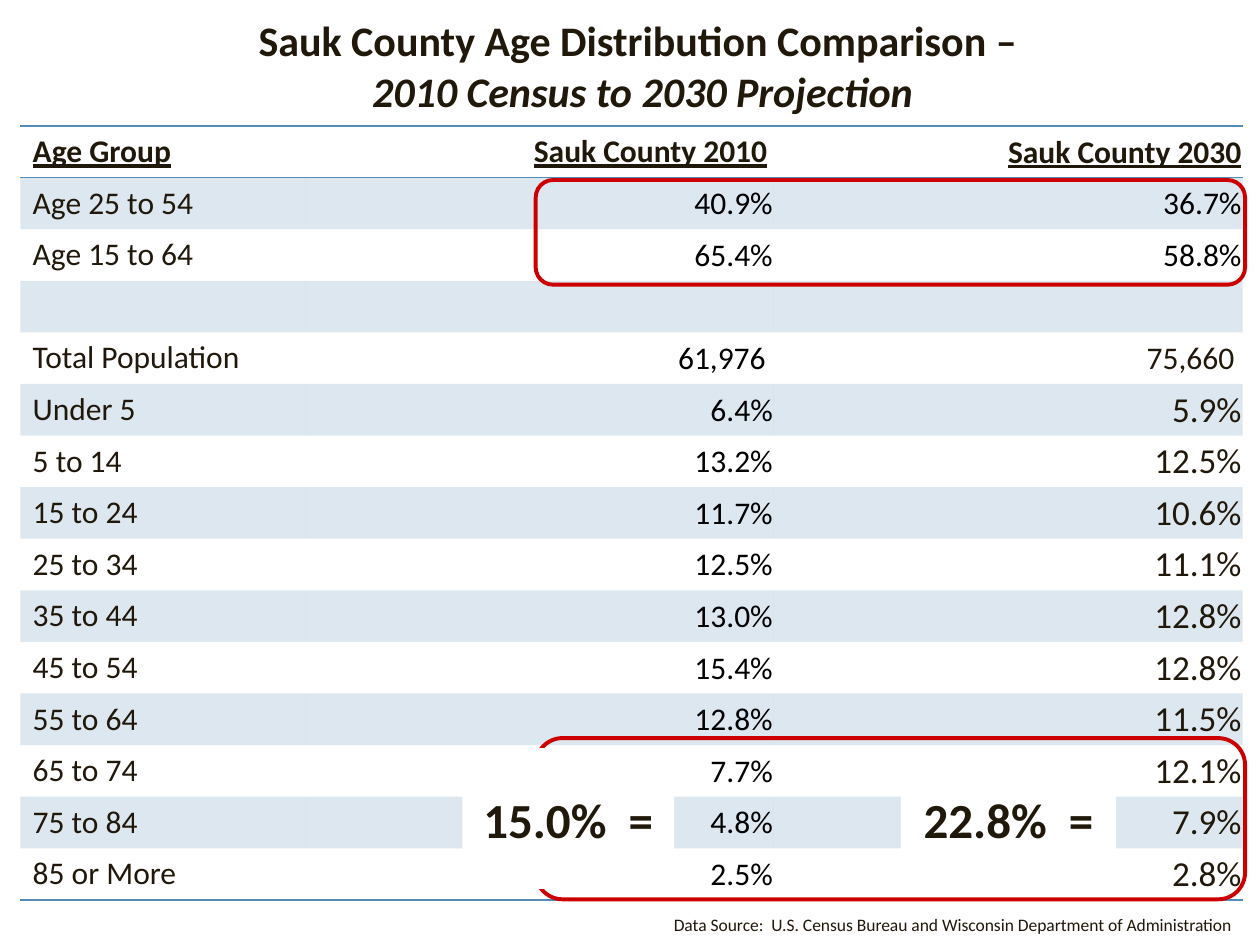
from lxml import etree
from pptx import Presentation
from pptx.dml.color import RGBColor
from pptx.enum import shapes, text
from pptx.oxml import ns
from pptx.util import Cm, Pt

INK = RGBColor(0x20, 0x18, 0x0A)
BLACK = RGBColor(0, 0, 0)
WHITE = RGBColor(255, 255, 255)
RED = RGBColor(0xCC, 0, 0)
BLUE = RGBColor(0x54, 0x8B, 0xB7)
FACE = "Calibri"
PLAIN = "{2D5ABB26-0587-4C30-8999-92F81FD0307C}"  # no style, no grid
LEFT, MID, RIGHT = text.PP_ALIGN.LEFT, text.PP_ALIGN.CENTER, text.PP_ALIGN.RIGHT

HEADS = ("Age Group", "Sauk County 2010", "Sauk County 2030")
ROWS = [
    ("Age 25 to 54", "40.9%", "36.7%"),
    ("Age 15 to 64", "65.4%", "58.8%"),
    ("", "", ""),
    ("Total Population", "61,976 ", " 75,660 "),
    ("Under 5", "6.4%", "5.9%"),
    ("5 to 14", "13.2%", "12.5%"),
    ("15 to 24", "11.7%", "10.6%"),
    ("25 to 34", "12.5%", "11.1%"),
    ("35 to 44", "13.0%", "12.8%"),
    ("45 to 54", "15.4%", "12.8%"),
    ("55 to 64", "12.8%", "11.5%"),
    ("65 to 74", "7.7%", "12.1%"),
    ("75 to 84", "4.8%", "7.9%"),
    ("85 or More", "2.5%", "2.8%"),
]
TOTAL = 4  # table row of the total population


def style(para, size, color=INK, bold=False, align=LEFT):
    para.alignment = align
    font = para.font
    font.name, font.size, font.bold = FACE, Pt(size), bold
    font.color.rgb = color


def add_title(slide):
    title = slide.shapes.title
    title.left, title.top = Cm(2.06), Cm(0.53)
    title.width, title.height = Cm(21.79), Cm(1.57)
    frame = title.text_frame
    frame.auto_size = text.MSO_AUTO_SIZE.NONE
    frame.vertical_anchor = text.MSO_ANCHOR.MIDDLE
    para = frame.paragraphs[0]
    para.add_run().text = "Sauk County Age Distribution Comparison – "
    para.add_line_break()
    run = para.add_run()
    run.text = "2010 Census to 2030 Projection"
    run.font.italic = True
    style(para, 24, bold=True, align=MID)


def add_rule(cell, side):
    props = cell._tc.get_or_add_tcPr()
    line = etree.SubElement(props, ns.qn("a:" + side), w=str(Pt(1)))
    fill = etree.SubElement(line, ns.qn("a:solidFill"))
    etree.SubElement(fill, ns.qn("a:srgbClr"), val=str(BLUE))


def shade(cell):
    cell.fill.solid()
    cell.fill.fore_color.rgb = BLUE
    tint = cell._tc.tcPr.find(".//" + ns.qn("a:solidFill") + "[last()]/" + ns.qn("a:srgbClr"))
    etree.SubElement(tint, ns.qn("a:alpha"), val="20000")


def fill_cell(cell, words, row, col):
    wide = col == 0 or (row == 0 and col == 1)
    cell.margin_left = Cm(0.25 if wide else 0.02)
    cell.margin_right = Cm(0.13 if wide else 0.02)
    cell.margin_top = Cm(0 if wide else 0.02)
    cell.margin_bottom = 0
    cell.vertical_anchor = text.MSO_ANCHOR.MIDDLE

    # Figures above the total are black; later 2030 figures are larger
    black = (col == 1 and row > 0) or (col == 2 and 0 < row < TOTAL)
    size = 20 if col == 2 and row > TOTAL else 18
    para = cell.text_frame.paragraphs[0]
    if words:
        para.text = words
    style(para, size, BLACK if black else INK, row == 0, RIGHT if col else LEFT)
    para.font.underline = row == 0

    # Rules round the header and under the last row, bands on odd rows
    if row == 0:
        add_rule(cell, "lnT")
    if row in (0, len(ROWS)):
        add_rule(cell, "lnB")
    if row % 2:
        shade(cell)


def add_grid(slide):
    lines = [HEADS] + ROWS
    high = Cm(1.04)
    frame = slide.shapes.add_table(len(lines), len(HEADS), Cm(0.41), Cm(2.54),
                                   Cm(24.64), high * len(lines))
    table = frame.table
    table.first_row = table.horz_banding = False
    table._tbl.tblPr.find(ns.qn("a:tableStyleId")).text = PLAIN
    for col, width in zip(table.columns, (5.74, 9.45, 9.45)):
        col.width = Cm(width)
    for row, line in enumerate(lines):
        table.rows[row].height = high
        for col, words in enumerate(line):
            fill_cell(table.cell(row, col), words, row, col)


def add_source(slide):
    box = slide.shapes.add_textbox(Cm(11.46), Cm(18.31), Cm(13.61), Cm(0.69))
    frame = box.text_frame
    frame.word_wrap = True
    para = frame.paragraphs[0]
    para.text = "Data Source:  U.S. Census Bureau and Wisconsin Department of Administration"
    style(para, 10, align=RIGHT)


def add_ring(slide, top, high):
    ring = slide.shapes.add_shape(shapes.MSO_SHAPE.ROUNDED_RECTANGLE,
                                  Cm(10.8), Cm(top), Cm(14.3), Cm(high))
    ring.shadow.inherit = False
    ring.fill.background()
    ring.line.color.rgb = RED
    ring.line.width = Pt(2.25)


def add_sum(slide, words, left, wide):
    box = slide.shapes.add_shape(shapes.MSO_SHAPE.RECTANGLE,
                                 Cm(left), Cm(15.08), Cm(wide), Cm(2.84))
    box.shadow.inherit = False
    box.fill.solid()
    box.fill.fore_color.rgb = WHITE
    box.line.fill.background()
    frame = box.text_frame
    frame.word_wrap = True
    frame.vertical_anchor = text.MSO_ANCHOR.MIDDLE
    para = frame.paragraphs[0]
    para.text = words
    style(para, 28, bold=True, align=MID)


def main():
    deck = Presentation()
    deck.slide_width, deck.slide_height = Cm(25.4), Cm(19.05)
    slide = deck.slides.add_slide(deck.slide_layouts[5])
    add_title(slide)
    add_grid(slide)
    add_source(slide)
    # Rings round the working ages and the seniors
    add_ring(slide, 3.63, 2.11)
    add_ring(slide, 14.88, 3.25)
    # Sums of the senior shares
    add_sum(slide, "15.0%  =", 9.32, 4.27)
    add_sum(slide, "22.8%  =", 18.16, 4.34)
    deck.save("out.pptx")


if __name__ == "__main__":
    main()
